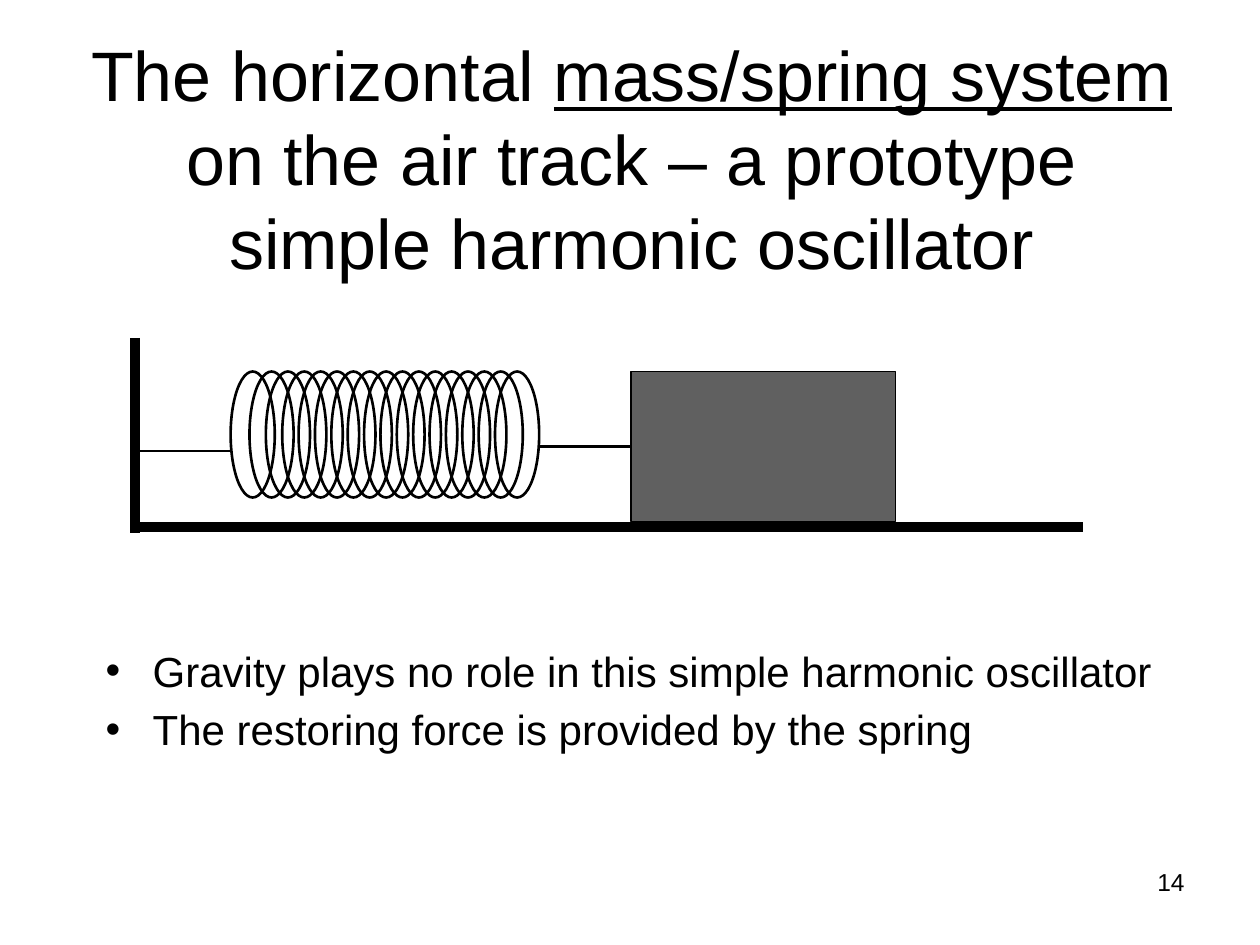
from pptx import Presentation
from pptx.dml.color import RGBColor
from pptx.enum.shapes import MSO_CONNECTOR, MSO_SHAPE
from pptx.enum.text import MSO_ANCHOR, PP_ALIGN
from pptx.oxml.ns import qn
from pptx.util import Cm, Pt
from lxml.etree import SubElement

BLACK = "000000"
GREY = "606060"
COIL_TOP, COIL_WIDTH, COIL_HEIGHT = 7.49, 0.89, 2.54
FIRST_COIL, SECOND_COIL, COIL_STEP = 4.65, 5.03, 0.33
REGULAR_COILS = 16
WALL_X, TRACK_Y = 2.72, 10.62


def color(code):
    return RGBColor.from_string(code)


def add_bullet(para):
    """Give the paragraph a round bullet with a hanging indent."""
    properties = para._p.get_or_add_pPr()
    properties.set("marL", str(Cm(0.95)))
    properties.set("indent", str(-Cm(0.95)))
    SubElement(properties, qn("a:buFont"), typeface="Arial")
    SubElement(properties, qn("a:buChar"), char="•")


def add_text(page, paragraphs, left, top, width, height, size=24,
             align=PP_ALIGN.LEFT, anchor=MSO_ANCHOR.TOP, bullet=False, before=0):
    """Add a box of paragraphs, each a list of (text, underlined) spans."""
    box = page.shapes.add_textbox(Cm(left), Cm(top), Cm(width), Cm(height))
    frame = box.text_frame
    frame.word_wrap = True
    frame.vertical_anchor = anchor
    for index, spans in enumerate(paragraphs):
        para = frame.add_paragraph() if index else frame.paragraphs[0]
        para.alignment = align
        para.space_before = Pt(before)
        if bullet:
            add_bullet(para)
        for text, underlined in spans:
            span = para.add_run()
            span.text = text
            span.font.name = "Arial"
            span.font.size = Pt(size)
            span.font.underline = underlined
            span.font.color.rgb = color(BLACK)


def add_outlined(page, kind, left, top, width, height, weight, fill=None):
    shape = page.shapes.add_shape(kind, Cm(left), Cm(top), Cm(width), Cm(height))
    shape.shadow.inherit = False
    if fill:
        shape.fill.solid()
        shape.fill.fore_color.rgb = color(fill)
    else:
        shape.fill.background()
    shape.line.color.rgb = color(BLACK)
    shape.line.width = Pt(weight)
    return shape


def add_line(page, start, end, weight):
    line = page.shapes.add_connector(
        MSO_CONNECTOR.STRAIGHT, *(Cm(value) for value in (*start, *end)))
    line.line.color.rgb = color(BLACK)
    line.line.width = Pt(weight)
    SubElement(line._element.spPr, qn("a:effectLst"))
    return line


def add_spring(page):
    coils = [FIRST_COIL]
    coils += [SECOND_COIL + COIL_STEP * index for index in range(REGULAR_COILS)]
    for left in coils:
        add_outlined(page, MSO_SHAPE.OVAL, left, COIL_TOP, COIL_WIDTH, COIL_HEIGHT, 1.5)
    add_line(page, (FIRST_COIL, 9.09), (WALL_X, 9.09), 1.5)
    return coils[-1] + COIL_WIDTH


def add_oscillator(page):
    spring_end = add_spring(page)
    hook = add_line(page, (spring_end, 9), (12.72, 9), 1.5)
    mass = add_outlined(page, MSO_SHAPE.RECTANGLE, 12.72, COIL_TOP, 5.33, 3.02, 0.75, GREY)
    hook.end_connect(mass, 1)
    add_line(page, (WALL_X, TRACK_Y), (21.84, TRACK_Y), 6)
    add_line(page, (WALL_X, 6.81), (WALL_X, 10.74), 6)


def main():
    deck = Presentation()
    deck.slide_width, deck.slide_height = Cm(25.4), Cm(19.05)
    page = deck.slides.add_slide(deck.slide_layouts[6])
    title = [("The horizontal ", False), ("mass/spring system ", True),
             ("on the air track – a prototype simple harmonic oscillator", False)]
    add_text(page, [title], 1.3, 0.94, 22.86, 4.47, size=40,
             align=PP_ALIGN.CENTER, anchor=MSO_ANCHOR.MIDDLE)
    points = ["Gravity plays no role in this simple harmonic oscillator",
              "The restoring force is provided by the spring"]
    add_text(page, [[(point, False)] for point in points], 1.88, 12.88, 21.67, 2.54,
             bullet=True, before=4.8)
    add_text(page, [[("14", False)]], 18.21, 17.35, 5.92, 1.32, size=14,
             align=PP_ALIGN.RIGHT)
    add_oscillator(page)
    deck.save("out.pptx")


if __name__ == "__main__":
    main()
